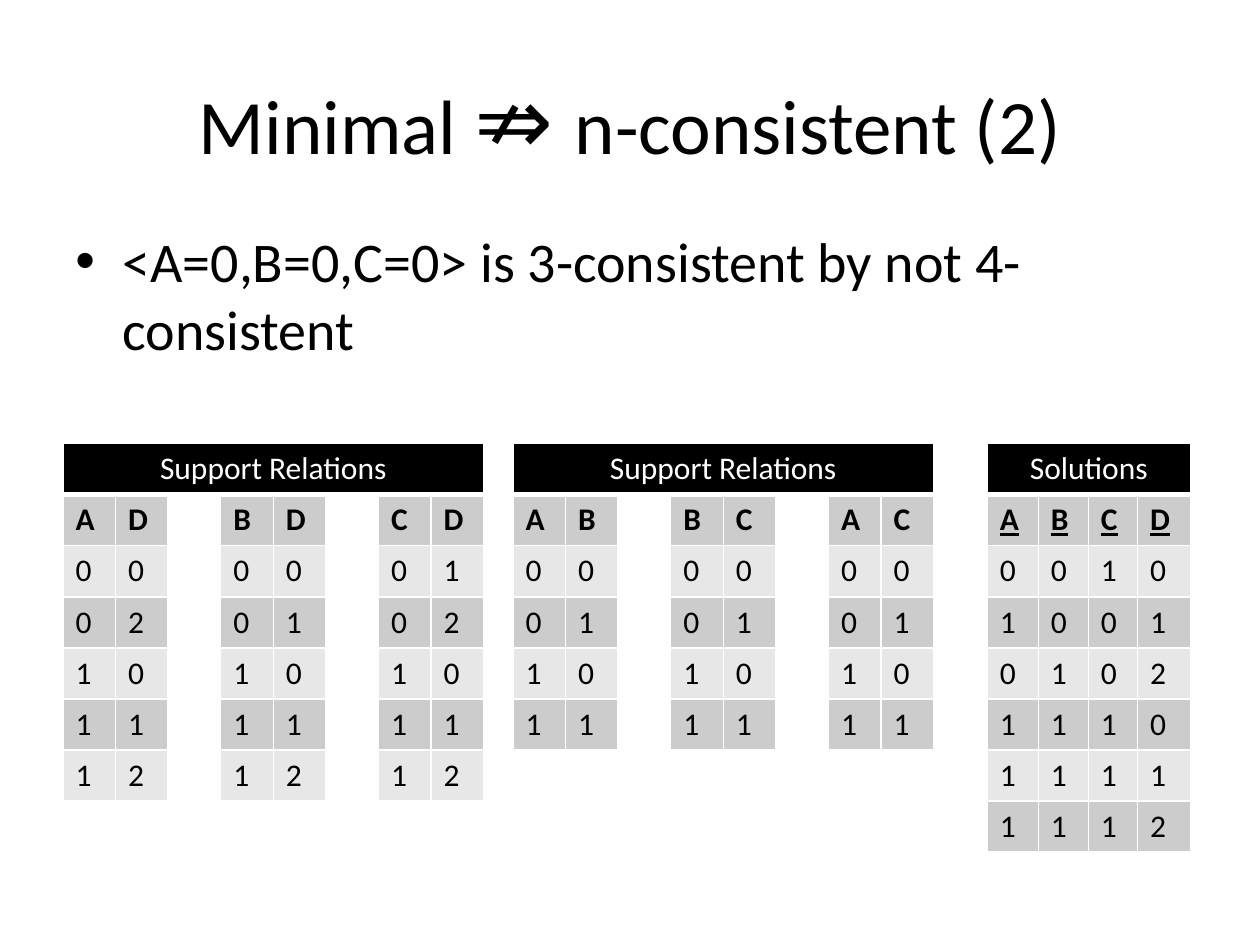
"""Build a slide on minimal versus n-consistent networks with relation tables."""
from dataclasses import dataclass

import pptx
import pptx.enum.text
import pptx.oxml
import pptx.oxml.ns
import pptx.util
from pptx.util import Cm

COLOURS = {
    "text": "000000",
    "header": "000000",
    "header_text": "FFFFFF",
    "dark_band": "CCCCCC",
    "light_band": "E7E7E7",
    "gap": "FFFFFF",
    "border": "FFFFFF",
}
FONT = "Calibri"
ROW_HEIGHT = 1.03
TABLE_TOP = 8.94
RELATION_WIDTHS = (1.06,) * 8
SOLUTION_WIDTHS = (1.03, 1.01, 0.99, 1.07)


@dataclass(frozen=True)
class Relation:
    """A table whose rows hold one character per cell, with spaces as gaps."""

    title: str
    left: float
    widths: tuple[float, ...]
    rows: tuple[str, ...]
    underline: bool = False


RELATIONS = (
    Relation("Solutions", 19.9, SOLUTION_WIDTHS,
             ("ABCD", "0010", "1001", "0102", "1110", "1111", "1112"), True),
    Relation("Support Relations", 1.27, RELATION_WIDTHS,
             ("AD BD CD", "00 00 01", "02 01 02", "10 10 10", "11 11 11", "12 12 12")),
    Relation("Support Relations", 10.34, RELATION_WIDTHS,
             ("AB BC AC", "00 00 00", "01 01 01", "10 10 10", "11 11 11")),
)


def rgb(name: str) -> pptx.dml.color.RGBColor:
    """Return the named colour."""
    return pptx.dml.color.RGBColor.from_string(COLOURS[name])


def add_span(para, text: str, colour: str = "text", size: float = 18, **extra) -> None:
    """Add a formatted run to a paragraph."""
    span = para.add_run()
    span.text = text
    values = {"name": FONT, "size": pptx.util.Pt(size), **extra}
    for key, value in values.items():
        setattr(span.font, key, value)
    span.font.color.rgb = rgb(colour)


def place(box, left: float, top: float, width: float, height: float) -> None:
    """Set a shape's position and size in centimetres."""
    frame = {"left": left, "top": top, "width": width, "height": height}
    for key, value in frame.items():
        setattr(box, key, Cm(value))


def format_cell(cell, fill: str, bottom: int = 1) -> None:
    """Give a cell its borders and fill."""
    properties = cell._tc.get_or_add_tcPr()
    for side, points in {"L": 1, "R": 1, "T": 1, "B": bottom}.items():
        properties.append(pptx.oxml.parse_xml(
            f'<a:ln{side} {pptx.oxml.ns.nsdecls("a")} w="{pptx.util.Pt(points)}">'
            f'<a:solidFill><a:srgbClr val="{COLOURS["border"]}"/></a:solidFill>'
            f'</a:ln{side}>'))
    cell.fill.solid()
    cell.fill.fore_color.rgb = rgb(fill)


def add_relation(page, relation: Relation) -> None:
    """Draw a relation as a table under a merged title row."""
    row_count = len(relation.rows) + 1
    table = page.shapes.add_table(
        row_count, len(relation.widths), Cm(relation.left), Cm(TABLE_TOP),
        Cm(sum(relation.widths)), Cm(ROW_HEIGHT * row_count)).table
    for column, width in zip(table.columns, relation.widths):
        column.width = Cm(width)
    for row in table.rows:
        row.height = Cm(ROW_HEIGHT)

    for cell in table.rows[0].cells:
        format_cell(cell, "header", bottom=3)
    header = table.cell(0, 0)
    header.merge(table.cell(0, len(relation.widths) - 1))
    para = header.text_frame.paragraphs[0]
    para.alignment = pptx.enum.text.PP_ALIGN.CENTER
    add_span(para, relation.title, "header_text", bold=False)

    for index, values in enumerate(relation.rows):
        band = "light_band" if index % 2 else "dark_band"
        names = index == 0
        for column, value in enumerate(values):
            cell = table.cell(index + 1, column)
            format_cell(cell, "gap" if value == " " else band)
            if value != " ":
                add_span(cell.text_frame.paragraphs[0], value, bold=names,
                         underline=names and relation.underline)


def add_title(page) -> None:
    """Fill and place the title placeholder."""
    title = page.shapes.title
    place(title, 1.27, 0.76, 22.86, 3.18)
    title.text_frame.vertical_anchor = pptx.enum.text.MSO_ANCHOR.MIDDLE
    para = title.text_frame.paragraphs[0]
    para.alignment = pptx.enum.text.PP_ALIGN.CENTER
    for text, size in (("Minimal ", 44), ("⇏ ", 54), ("n-consistent (2)", 44)):
        add_span(para, text, size=size)


def add_bullet(page, text: str) -> None:
    """Add the bulleted statement."""
    box = page.shapes.add_textbox(0, 0, 0, 0)
    place(box, 1.27, 4.45, 22.86, 12.57)
    box.text_frame.word_wrap = True
    para = box.text_frame.paragraphs[0]
    para.space_before = pptx.util.Pt(6.4)
    add_span(para, text, size=32)
    properties = para._p.get_or_add_pPr()
    properties.set("marL", str(Cm(0.95)))
    properties.set("indent", str(Cm(-0.95)))
    for tag in ('buFont typeface="Arial"', 'buChar char="•"'):
        properties.append(pptx.oxml.parse_xml(f'<a:{tag} {pptx.oxml.ns.nsdecls("a")}/>'))


def main() -> None:
    """Build and save the deck."""
    deck = pptx.Presentation()
    deck.slide_width, deck.slide_height = Cm(25.4), Cm(19.05)
    page = deck.slides.add_slide(deck.slide_layouts.get_by_name("Title Only"))
    add_bullet(page, "<A=0,B=0,C=0> is 3-consistent by not 4-consistent")
    for relation in RELATIONS:
        add_relation(page, relation)
    add_title(page)
    deck.save("out.pptx")


if __name__ == "__main__":
    main()
